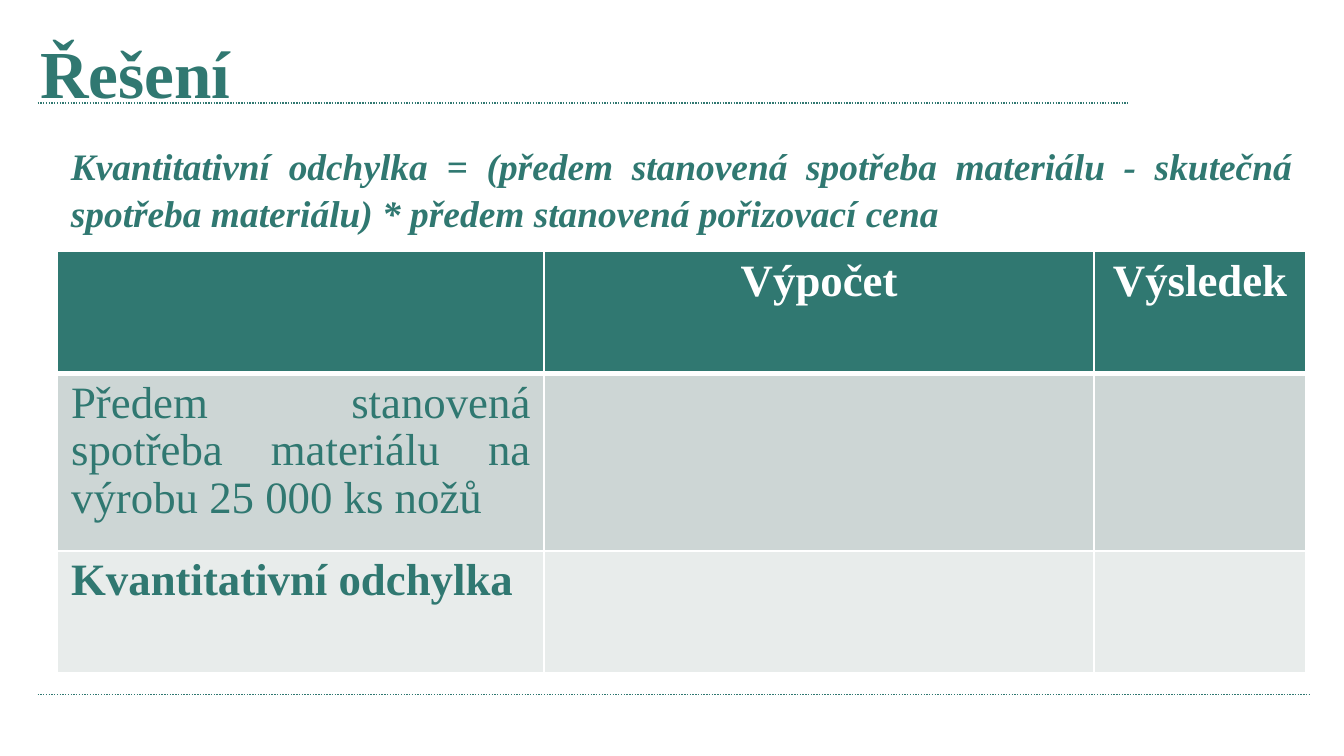
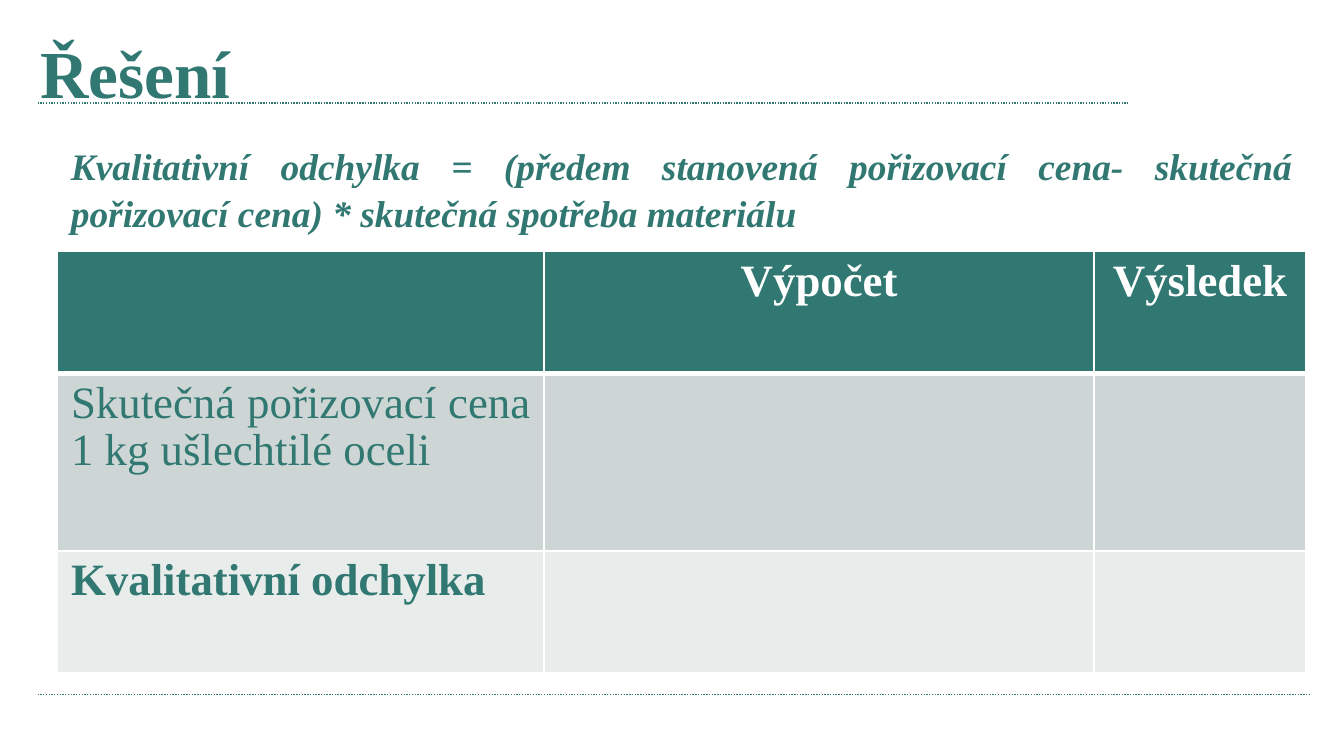
from dataclasses import dataclass

from lxml import etree
from pptx import Presentation
from pptx.dml.color import RGBColor
from pptx.enum import dml, shapes, text
from pptx.oxml import ns
from pptx.util import Cm, Pt

TEAL = RGBColor(0x30, 0x78, 0x71)
WHITE = RGBColor(0xFF, 0xFF, 0xFF)
BAND_DARK = RGBColor(0xCD, 0xD6, 0xD5)
BAND_LIGHT = RGBColor(0xE8, 0xEC, 0xEB)
FONT = "Times New Roman"

CONTENT_LEFT = Cm(1.09)
CONTENT_WIDTH = Cm(23.6)
COLUMN_WIDTHS = (Cm(9.19), Cm(10.4), Cm(4))
ROW_HEIGHTS = (Cm(2.31), Cm(3.35), Cm(2.31))
ROW_FILLS = (TEAL, BAND_DARK, BAND_LIGHT)


@dataclass(frozen=True)
class Rule:
    left: Cm
    right: Cm
    top: Cm


@dataclass(frozen=True)
class TextStyle:
    size: int
    color: RGBColor = TEAL
    bold: bool = True
    italic: bool = False
    align: text.PP_ALIGN = text.PP_ALIGN.LEFT
    line_spacing: float = 1.0


@dataclass(frozen=True)
class Solution:
    formula: str
    formula_height: Cm
    given: str
    deviation: str


RULES = (
    Rule(Cm(0.71), Cm(21.31), Cm(1.95)),
    Rule(Cm(0.71), Cm(24.77), Cm(13.13)),
)

TITLE_STYLE = TextStyle(36)
FORMULA_STYLE = TextStyle(20, italic=True, align=text.PP_ALIGN.JUSTIFY, line_spacing=1.05)
HEADER_STYLE = TextStyle(24, color=WHITE, align=text.PP_ALIGN.CENTER, line_spacing=0.96)
GIVEN_STYLE = TextStyle(24, bold=False, align=text.PP_ALIGN.JUSTIFY, line_spacing=0.96)
DEVIATION_STYLE = TextStyle(24, line_spacing=0.96)

SOLUTIONS = (
    Solution(
        "Kvantitativní odchylka = (předem stanovená spotřeba materiálu - "
        "skutečná spotřeba materiálu) * předem stanovená pořizovací cena",
        Cm(4.52),
        "Předem stanovená spotřeba materiálu na výrobu 25 000 ks nožů",
        "Kvantitativní odchylka",
    ),
    Solution(
        "Kvalitativní odchylka = (předem stanovená pořizovací cena- "
        "skutečná pořizovací cena) * skutečná spotřeba materiálu",
        Cm(3.5),
        "Skutečná pořizovací cena 1 kg ušlechtilé oceli",
        "Kvalitativní odchylka",
    ),
)


def write(frame, content: str, style: TextStyle) -> None:
    paragraph = frame.paragraphs[0]
    paragraph.alignment = style.align
    paragraph.line_spacing = style.line_spacing
    run = paragraph.add_run()
    run.text = content
    run.font.name = FONT
    run.font.size = Pt(style.size)
    run.font.bold = style.bold
    run.font.italic = style.italic
    run.font.color.rgb = style.color


def add_rule(slide, rule: Rule) -> None:
    connector = slide.shapes.add_connector(
        shapes.MSO_CONNECTOR.STRAIGHT, rule.left, rule.top, rule.right, rule.top
    )
    connector.line.color.rgb = TEAL
    connector.line.width = Pt(0.75)
    connector.line.dash_style = dml.MSO_LINE.ROUND_DOT
    etree.SubElement(connector.element.spPr, ns.qn("a:effectLst"))


def set_title(slide, content: str) -> None:
    title = slide.shapes.title
    title.left, title.top, title.width, title.height = Cm(0.51), Cm(0.36), Cm(22.4), Cm(2)
    title.text_frame.vertical_anchor = text.MSO_ANCHOR.MIDDLE
    write(title.text_frame, content, TITLE_STYLE)


def add_formula(slide, content: str, height: Cm) -> None:
    box = slide.shapes.add_textbox(CONTENT_LEFT, Cm(2.54), CONTENT_WIDTH, height)
    box.text_frame.word_wrap = True
    box.text_frame.auto_size = text.MSO_AUTO_SIZE.SHAPE_TO_FIT_TEXT
    write(box.text_frame, content, FORMULA_STYLE)


def set_borders(cell, row: int) -> None:
    """White borders, with a thicker one between the header and the body."""
    widths = {"L": 1, "R": 1, "T": 3 if row == 1 else 1, "B": 3 if row == 0 else 1}
    properties = cell._tc.get_or_add_tcPr()
    for side, width in widths.items():
        line = etree.SubElement(properties, ns.qn(f"a:ln{side}"), w=str(Pt(width)))
        fill = etree.SubElement(line, ns.qn("a:solidFill"))
        etree.SubElement(fill, ns.qn("a:srgbClr"), val=str(WHITE))


def add_solution_table(slide, solution: Solution) -> None:
    table = slide.shapes.add_table(
        len(ROW_HEIGHTS), len(COLUMN_WIDTHS), CONTENT_LEFT, Cm(4.75),
        sum(COLUMN_WIDTHS), sum(ROW_HEIGHTS),
    ).table
    for column, width in zip(table.columns, COLUMN_WIDTHS):
        column.width = width
    for index, (row, height, color) in enumerate(zip(table.rows, ROW_HEIGHTS, ROW_FILLS)):
        row.height = height
        for cell in row.cells:
            set_borders(cell, index)
            cell.fill.solid()
            cell.fill.fore_color.rgb = color
    for column, heading in enumerate(("Výpočet", "Výsledek"), start=1):
        write(table.cell(0, column).text_frame, heading, HEADER_STYLE)
    write(table.cell(1, 0).text_frame, solution.given, GIVEN_STYLE)
    write(table.cell(2, 0).text_frame, solution.deviation, DEVIATION_STYLE)


def add_solution_slide(presentation, solution: Solution) -> None:
    slide = presentation.slides.add_slide(presentation.slide_layouts[5])
    for rule in RULES:
        add_rule(slide, rule)
    set_title(slide, "Řešení")
    add_formula(slide, solution.formula, solution.formula_height)
    add_solution_table(slide, solution)


def main() -> None:
    presentation = Presentation()
    presentation.slide_width = Cm(25.4)
    presentation.slide_height = Cm(14.29)
    for solution in SOLUTIONS:
        add_solution_slide(presentation, solution)
    presentation.save("out.pptx")


if __name__ == "__main__":
    main()
